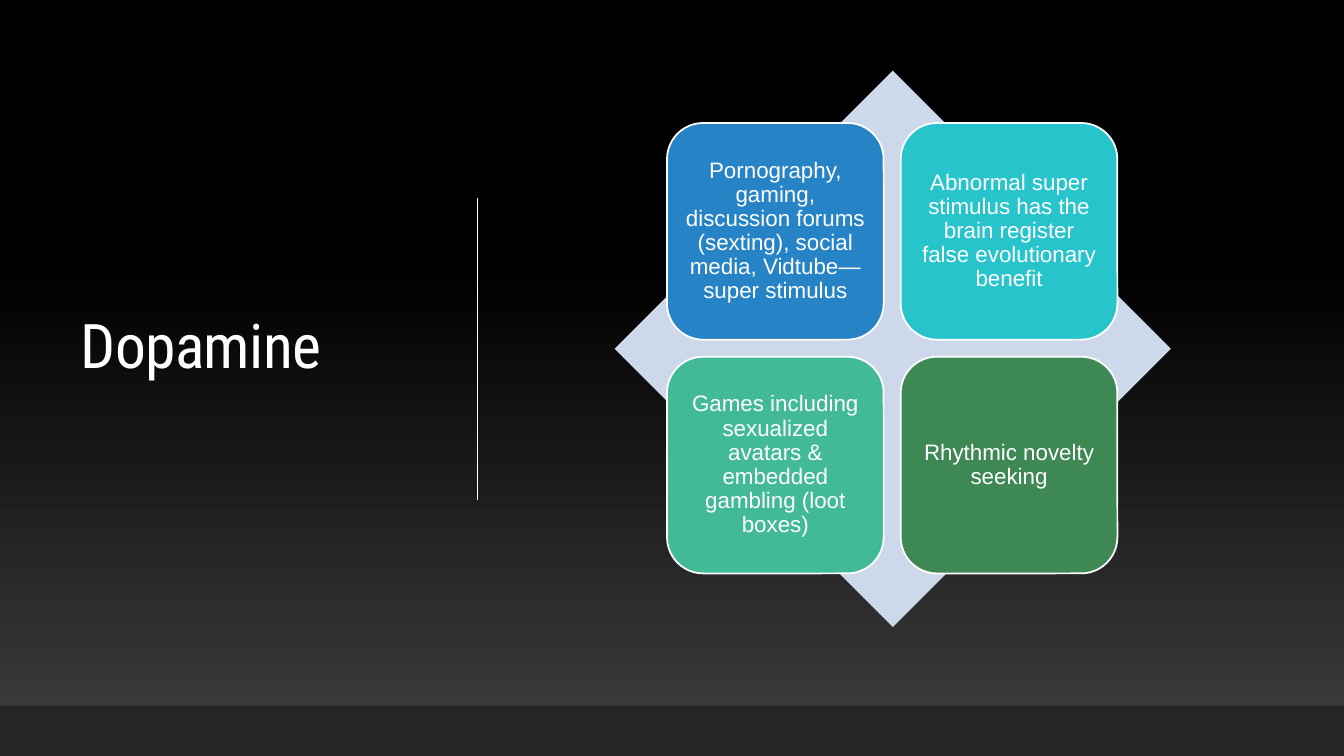
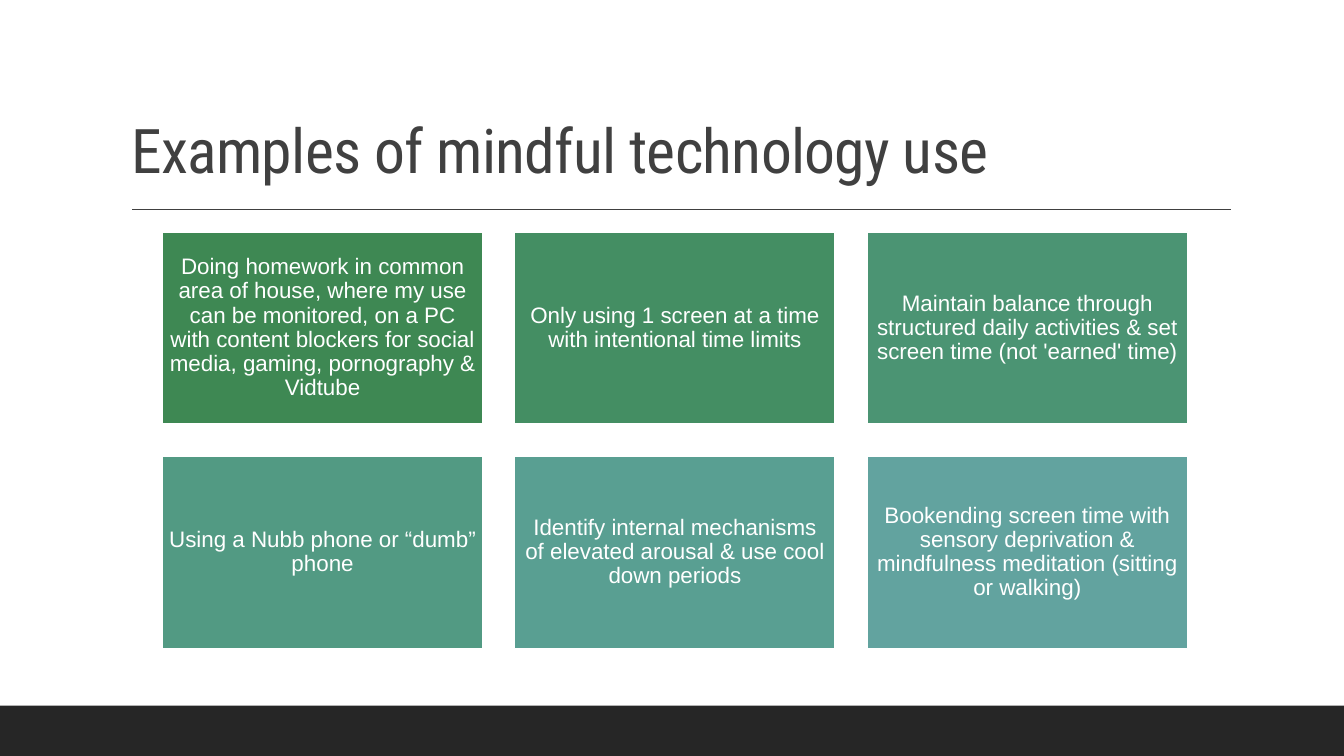
"""Build two slides on dopamine and mindful technology use."""
from dataclasses import dataclass
from typing import Any, NamedTuple

from lxml import etree
from pptx import Presentation
from pptx import util as u
from pptx.dml.color import RGBColor
from pptx.enum import shapes, text
from pptx.oxml import ns


@dataclass(frozen=True)
class Theme:
    """Colours, fonts and sizes shared by the slides."""

    white: str = "FFFFFF"
    dark: str = "404040"
    band: str = "262626"
    diamond: str = "CDD9EA"
    gradient: tuple[tuple[float, str], ...] = ((0, "3F3F3F"), (0.65, "000000"))
    title_font: str = "Roboto Condensed"
    body_font: str = "Arial"
    title_size: int = 44
    body_size: int = 16
    rule_width: float = 1
    outline_width: float = 1.25
    line_spacing: float = 0.9
    title_tracking: str = "-50"


class Box(NamedTuple):
    """A rectangle in centimetres."""

    left: float
    top: float
    width: float
    height: float

    def lengths(self) -> list[u.Cm]:
        """Return the sides as lengths."""
        return [u.Cm(value) for value in self]


class Tile(NamedTuple):
    """A coloured tile and its words."""

    colour: str
    words: str


class Grid(NamedTuple):
    """Equal cells laid out in rows with one gap."""

    first: Box
    gap: float
    columns: int
    preset: shapes.MSO_SHAPE

    def cell(self, index: int) -> Box:
        """Return the box of the cell at an index."""
        row, column = divmod(index, self.columns)
        left, top, width, height = self.first
        return Box(left + column * (width + self.gap),
                   top + row * (height + self.gap), width, height)


THEME = Theme()
SLIDE_WIDTH, SLIDE_HEIGHT = 33.87, 19.05
BAND = Box(0, 17.78, SLIDE_WIDTH, SLIDE_HEIGHT - 17.78)
TITLE_ONLY = 5

DIAMOND = Box(15.49, 1.78, 14.02, 14.02)
DOPAMINE_GRID = Grid(Box(16.81, 3.1, 5.46, 5.46), 0.43, 2,
                     shapes.MSO_SHAPE.ROUNDED_RECTANGLE)
DOPAMINE_TILES = (
    Tile("2683C6", "Pornography, gaming, discussion forums (sexting), social "
                   "media, Vidtube—super stimulus"),
    Tile("28C4CC", "Abnormal super stimulus has the brain register false "
                   "evolutionary benefit"),
    Tile("42BA97", "Games including sexualized avatars & embedded gambling "
                   "(loot boxes)"),
    Tile("3E8853", "Rhythmic novelty seeking"),
)
EXAMPLE_GRID = Grid(Box(4.09, 5.84, 8.08, 4.85), 0.8, 3,
                    shapes.MSO_SHAPE.RECTANGLE)
EXAMPLE_TILES = (
    Tile("3E8853", "Doing homework in common area of house, where my use can "
                   "be monitored, on a PC with content blockers for social "
                   "media, gaming, pornography & Vidtube"),
    Tile("448E63", "Only using 1 screen at a time with intentional time limits"),
    Tile("4B9473", "Maintain balance through structured daily activities & "
                   "set screen time (not 'earned' time)"),
    Tile("529A83", "Using a Nubb phone or “dumb” phone"),
    Tile("599F92", "Identify internal mechanisms of elevated arousal & use "
                   "cool down periods"),
    Tile("62A39F", "Bookending screen time with sensory deprivation & "
                   "mindfulness meditation (sitting or walking)"),
)


def rgb(colour: str) -> RGBColor:
    """Return a colour object."""
    return RGBColor.from_string(colour)


def set_all(target: Any, values: dict[str, Any]) -> None:
    """Set attributes from a dict."""
    for name, value in values.items():
        setattr(target, name, value)


def write(shape: Any, words: str, font: str, size: int, colour: str,
          align: text.PP_ALIGN, anchor: text.MSO_ANCHOR) -> Any:
    """Put one formatted paragraph in a shape and return its run."""
    frame = shape.text_frame
    set_all(frame, {"word_wrap": True, "vertical_anchor": anchor,
                    "auto_size": text.MSO_AUTO_SIZE.NONE})
    paragraph = frame.paragraphs[0]
    set_all(paragraph, {"alignment": align, "line_spacing": THEME.line_spacing})
    run = paragraph.add_run()
    run.text = words
    set_all(run.font, {"name": font, "size": u.Pt(size)})
    run.font.color.rgb = rgb(colour)
    return run


def add_title(slide: Any, words: str, box: Box, colour: str,
              anchor: text.MSO_ANCHOR) -> None:
    """Place and format the title placeholder."""
    title = slide.shapes.title
    set_all(title, dict(zip(("left", "top", "width", "height"), box.lengths())))
    run = write(title, words, THEME.title_font, THEME.title_size, colour,
                text.PP_ALIGN.LEFT, anchor)
    run.font._element.set("spc", THEME.title_tracking)


def add_block(slide: Any, preset: shapes.MSO_SHAPE, box: Box, fill: str,
              outline: str | None = None) -> Any:
    """Add a flat filled shape with an optional outline."""
    shape = slide.shapes.add_shape(preset, *box.lengths())
    shape.shadow.inherit = False
    shape.fill.solid()
    shape.fill.fore_color.rgb = rgb(fill)
    if outline:
        shape.line.color.rgb = rgb(outline)
        shape.line.width = u.Pt(THEME.outline_width)
    else:
        shape.line.fill.background()
    return shape


def add_rule(slide: Any, box: Box, colour: str) -> None:
    """Add a thin straight line across a box."""
    left, top, width, height = box.lengths()
    rule = slide.shapes.add_connector(shapes.MSO_CONNECTOR.STRAIGHT, left, top,
                                      left + width, top + height)
    rule.line.color.rgb = rgb(colour)
    rule.line.width = u.Pt(THEME.rule_width)
    etree.SubElement(rule._element.spPr, ns.qn("a:effectLst"))


def add_tiles(slide: Any, grid: Grid, tiles: tuple[Tile, ...]) -> None:
    """Draw tiles with centred words on a grid."""
    inset = u.Cm(0.17)
    for index, tile in enumerate(tiles):
        shape = add_block(slide, grid.preset, grid.cell(index), tile.colour,
                          THEME.white)
        sides = ("left", "top", "right", "bottom")
        set_all(shape.text_frame, {f"margin_{side}": inset for side in sides})
        write(shape, tile.words, THEME.body_font, THEME.body_size, THEME.white,
              text.PP_ALIGN.CENTER, text.MSO_ANCHOR.MIDDLE)


def add_slide(presentation: Any) -> Any:
    """Add a title-only slide with the bottom band."""
    slide = presentation.slides.add_slide(presentation.slide_layouts[TITLE_ONLY])
    add_block(slide, shapes.MSO_SHAPE.RECTANGLE, BAND, THEME.band)
    return slide


def add_dopamine_slide(presentation: Any) -> None:
    """Build the dark slide with four tiles on a diamond."""
    slide = add_slide(presentation)
    fill = slide.background.fill
    fill.gradient()
    fill.gradient_angle = 90
    for stop, (position, colour) in zip(fill.gradient_stops, THEME.gradient):
        stop.color.rgb = rgb(colour)
        stop.position = position
    add_title(slide, "Dopamine", Box(1.78, 1.75, 9.37, 14.05), THEME.white,
              text.MSO_ANCHOR.MIDDLE)
    add_rule(slide, Box(12.04, 4.98, 0, 7.62), THEME.white)
    add_block(slide, shapes.MSO_SHAPE.DIAMOND, DIAMOND, THEME.diamond)
    add_tiles(slide, DOPAMINE_GRID, DOPAMINE_TILES)


def add_examples_slide(presentation: Any) -> None:
    """Build the white slide with six example tiles."""
    slide = add_slide(presentation)
    slide.background.fill.solid()
    slide.background.fill.fore_color.rgb = rgb(THEME.white)
    add_title(slide, "Examples of mindful technology use",
              Box(3.05, 0.79, 27.94, 4.04), THEME.dark, text.MSO_ANCHOR.BOTTOM)
    add_rule(slide, Box(3.33, 5.28, 27.69, 0), THEME.dark)
    add_tiles(slide, EXAMPLE_GRID, EXAMPLE_TILES)


def main() -> None:
    """Build and save the presentation."""
    presentation = Presentation()
    set_all(presentation, {"slide_width": u.Cm(SLIDE_WIDTH),
                           "slide_height": u.Cm(SLIDE_HEIGHT)})
    add_dopamine_slide(presentation)
    add_examples_slide(presentation)
    presentation.save("out.pptx")


if __name__ == "__main__":
    main()
